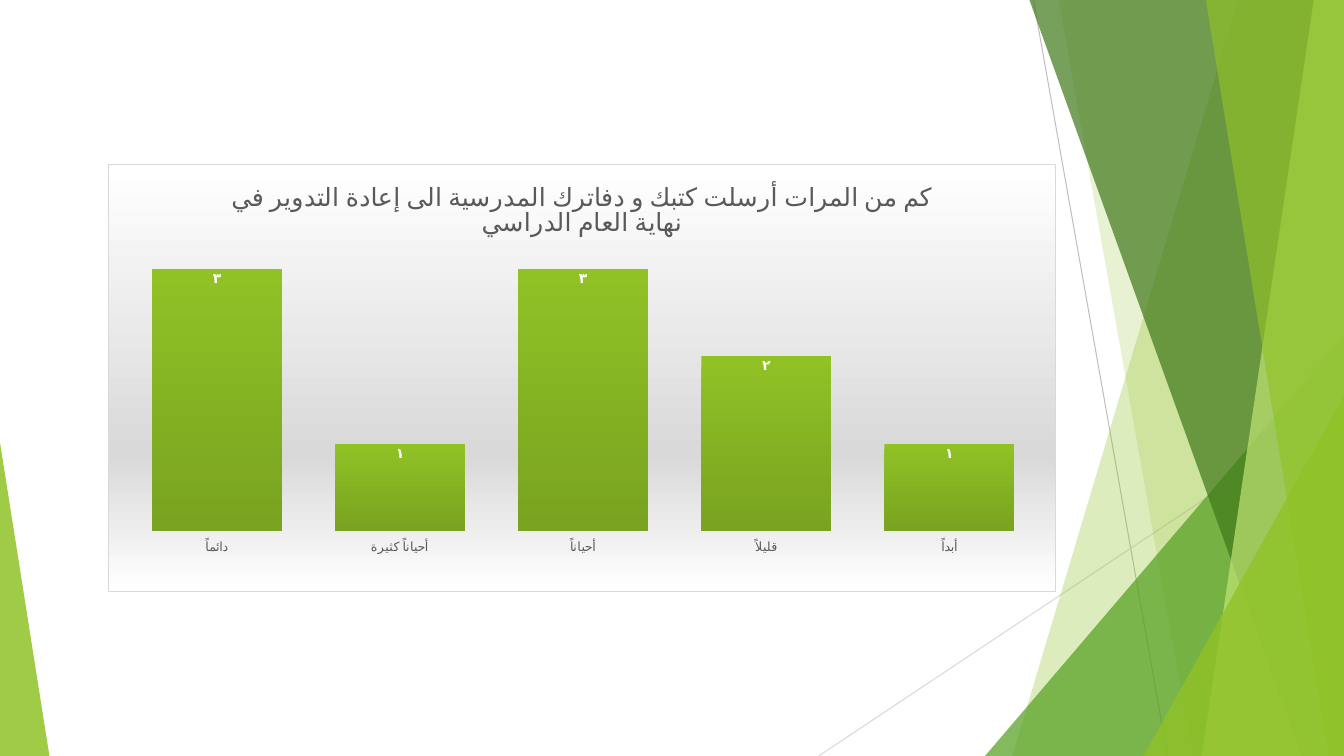
from lxml import etree
from pptx import Presentation
from pptx.chart.data import CategoryChartData
from pptx.dml.color import RGBColor
from pptx.enum.chart import XL_CHART_TYPE, XL_LABEL_POSITION, XL_TICK_LABEL_POSITION, XL_TICK_MARK
from pptx.enum.shapes import MSO_CONNECTOR, MSO_SHAPE
from pptx.enum.text import PP_ALIGN
from pptx.oxml import parse_xml
from pptx.oxml.ns import nsdecls, qn
from pptx.util import Inches, Pt

COLUMN = XL_CHART_TYPE.COLUMN_CLUSTERED
IN_END = XL_LABEL_POSITION.INSIDE_END
LOW = XL_TICK_LABEL_POSITION.LOW
NO_TICK = XL_TICK_MARK.NONE
STRAIGHT = MSO_CONNECTOR.STRAIGHT
TRIANGLE = MSO_SHAPE.ISOSCELES_TRIANGLE
CENTER = PP_ALIGN.CENTER

WIDE, HIGH = 13.33, 7.5
THEME = {
    "font": "Lato", "title": 18, "label": 10, "axis": 9, "hair": 0.75,
    "lime": "90C226", "moss": "79A320", "leaf": "54A021", "pine": "3F7819",
    "pale": "C0E474", "grey": "BFBFBF", "mist": "D9D9D9", "ink": "595959",
    "white": "FFFFFF",
}

TITLE = "كم من المرات أرسلت كتبك و دفاترك المدرسية الى إعادة التدوير في نهاية العام الدراسي"
ANSWERS = {"دائماً": 3, "أحياناً كثيرة": 1, "أحياناً": 3, "قليلاً": 2, "أبداً": 1}
DIGITS = "[$-2000401]0"
FRAME = (1.07, 1.63, 9.4, 4.24)
PLOT = {"x": 0.018, "y": 0.143, "w": 0.967, "h": 0.716}

# start x, start y, end x, end y, colour
LINES = [(10.25, 0, 11.58, HIGH, "grey"), (WIDE, 4.03, 8.12, HIGH, "mist")]
# Bands reach the right edge: kind, x at top, x at foot, colour, opacity
# Wedges stand on the foot: kind, (left, right), top, colour, opacity, peak
PANES = [
    ("band", 12.28, 10.04, "lime", 30),
    ("band", 10.5, 11.83, "lime", 20),
    ("wedge", (9.77, WIDE), 3.33, "leaf", 72, 1),
    ("band", 10.21, 12.91, "pine", 70),
    ("band", 13.03, 11.92, "pale", 70),
    ("band", 11.96, 13.18, "lime", 65),
    ("wedge", (11.34, WIDE), 3.93, "lime", 80, 1),
    ("wedge", (0, 0.49), 4.39, "lime", 85, 0),
]


def color(name):
    return RGBColor.from_string(THEME[name])


def style(font, size, tint, bold=False):
    font.name, font.size, font.bold = THEME["font"], Pt(size), bold
    font.color.rgb = color(tint)


def write(frame, text, size, tint, align=CENTER, rtl=True):
    para = frame.paragraphs[0]
    para.alignment = align
    if rtl:
        para._p.get_or_add_pPr().set("rtl", "1")
    run = para.add_run()
    run.text = text
    style(run.font, size, tint)


def glaze(shape, tint, alpha):
    """Fill a shape with a see-through colour and no outline."""
    shape.shadow.inherit = False
    shape.line.fill.background()
    shape.fill.solid()
    shape.fill.fore_color.rgb = color(tint)
    tone = shape._element.spPr.find(qn("a:solidFill"))[0]
    etree.SubElement(tone, qn("a:alpha")).set("val", str(alpha * 1000))


def blend(*stops):
    """Make a top-to-bottom gradient from (percent, colour) stops."""
    marks = "".join(
        f'<a:gs pos="{pos * 1000}"><a:srgbClr val="{THEME[tint]}"/></a:gs>'
        for pos, tint in stops)
    return (f'<a:gradFill {nsdecls("a")}><a:gsLst>{marks}</a:gsLst>'
            '<a:lin ang="5400000" scaled="0"/></a:gradFill>')


def add_line(shapes, x1, y1, x2, y2, tint):
    line = shapes.add_connector(STRAIGHT, *map(Inches, (x1, y1, x2, y2)))
    line.line.color.rgb = color(tint)
    line.line.width = Pt(THEME["hair"])
    etree.SubElement(line._element.spPr, qn("a:effectLst"))


def add_band(shapes, top, foot, tint, alpha):
    pen = shapes.build_freeform(Inches(top), 0)
    corners = [(WIDE, 0), (WIDE, HIGH), (foot, HIGH)]
    pen.add_line_segments([(Inches(x), Inches(y)) for x, y in corners], close=True)
    glaze(pen.convert_to_shape(), tint, alpha)


def add_wedge(shapes, span, top, tint, alpha, peak):
    left, right = span
    box = map(Inches, (left, top, right - left, HIGH - top))
    shape = shapes.add_shape(TRIANGLE, *box)
    shape.adjustments[0] = peak
    glaze(shape, tint, alpha)


def add_survey(shapes):
    data = CategoryChartData()
    data.categories = list(ANSWERS)
    data.add_series("Series 1", list(ANSWERS.values()))
    chart = shapes.add_chart(COLUMN, *map(Inches, FRAME), data).chart
    style(chart.font, THEME["label"], "ink")
    chart.has_legend = False
    chart.has_title = True
    write(chart.chart_title.text_frame, TITLE, THEME["title"], "ink")
    chart.chart_title.include_in_layout = False

    values = chart.value_axis
    values.minimum_scale, values.maximum_scale = 0, 3.5
    values.has_major_gridlines = False
    values.visible = False
    names = chart.category_axis
    names.major_tick_mark = names.minor_tick_mark = NO_TICK
    names.tick_label_position = LOW
    names.format.line.fill.background()
    style(names.tick_labels.font, THEME["axis"], "ink")

    plot = chart.plots[0]
    plot.gap_width = 41
    plot.vary_by_categories = False
    bars = plot.series[0]
    bars.format.line.fill.background()
    bars._element.get_or_add_spPr().insert(
        0, parse_xml(blend((0, "lime"), (100, "moss"))))
    labels = bars.data_labels
    labels.show_value = True
    labels.position = IN_END
    labels.number_format, labels.number_format_is_linked = DIGITS, False
    style(labels.font, THEME["label"], "white", bold=True)

    root = chart._chartSpace
    area = root.chart.plotArea
    for old in area.findall(qn("c:layout")):
        area.remove(old)
    modes = "".join(f'<c:{side}Mode val="edge"/>' for side in "xy")
    sizes = "".join(f'<c:{side} val="{part}"/>' for side, part in PLOT.items())
    area.insert(0, parse_xml(
        f'<c:layout {nsdecls("c")}><c:manualLayout><c:layoutTarget val="inner"/>'
        f'{modes}{sizes}</c:manualLayout></c:layout>'))
    back = blend((0, "white"), (68, "mist"), (100, "white"))
    root.chart.addnext(parse_xml(
        f'<c:spPr {nsdecls("c", "a")}>{back}<a:ln w="{Pt(THEME["hair"])}"><a:solidFill>'
        f'<a:srgbClr val="{THEME["mist"]}"/></a:solidFill></a:ln></c:spPr>'))


def main():
    deck = Presentation()
    deck.slide_width, deck.slide_height = Inches(WIDE), Inches(HIGH)
    shapes = deck.slides.add_slide(deck.slide_layouts[6]).shapes
    for line in LINES:
        add_line(shapes, *line)
    makers = {"band": add_band, "wedge": add_wedge}
    for kind, *rest in PANES:
        makers[kind](shapes, *rest)
    add_survey(shapes)
    deck.save("out.pptx")


if __name__ == "__main__":
    main()
